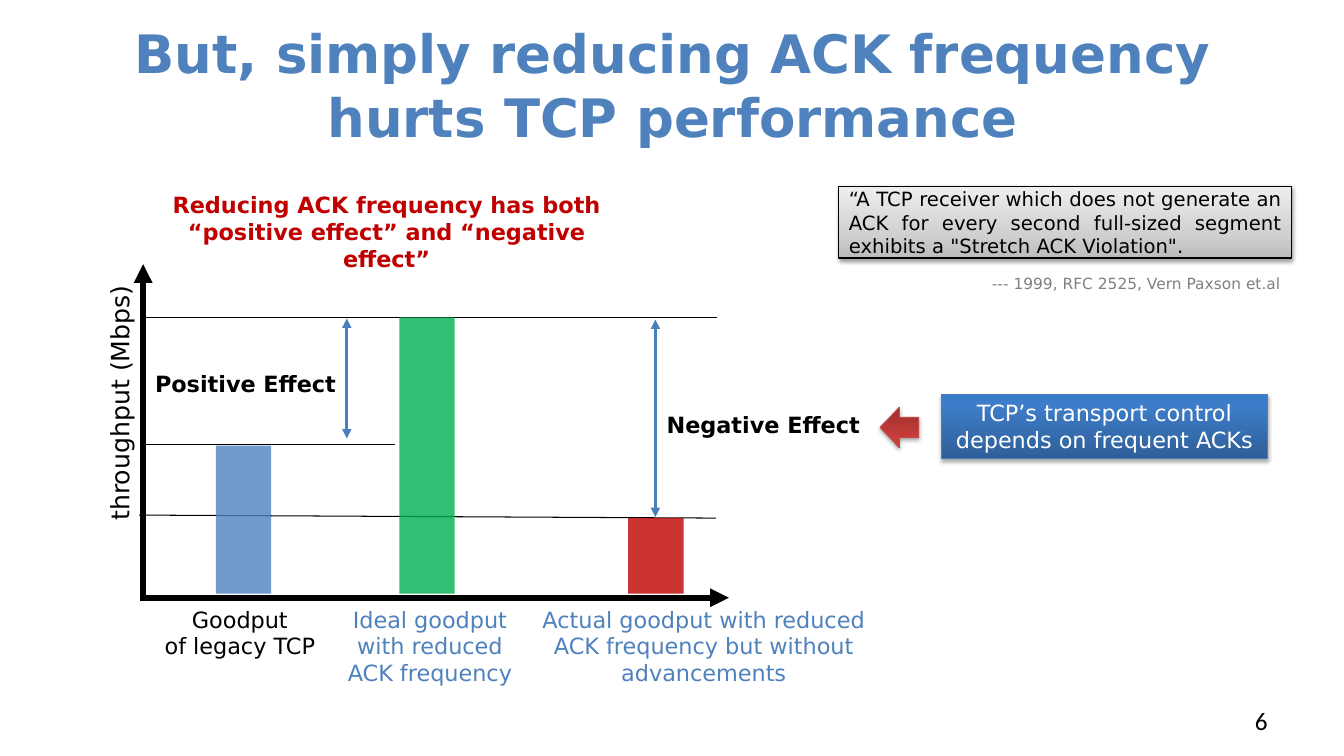
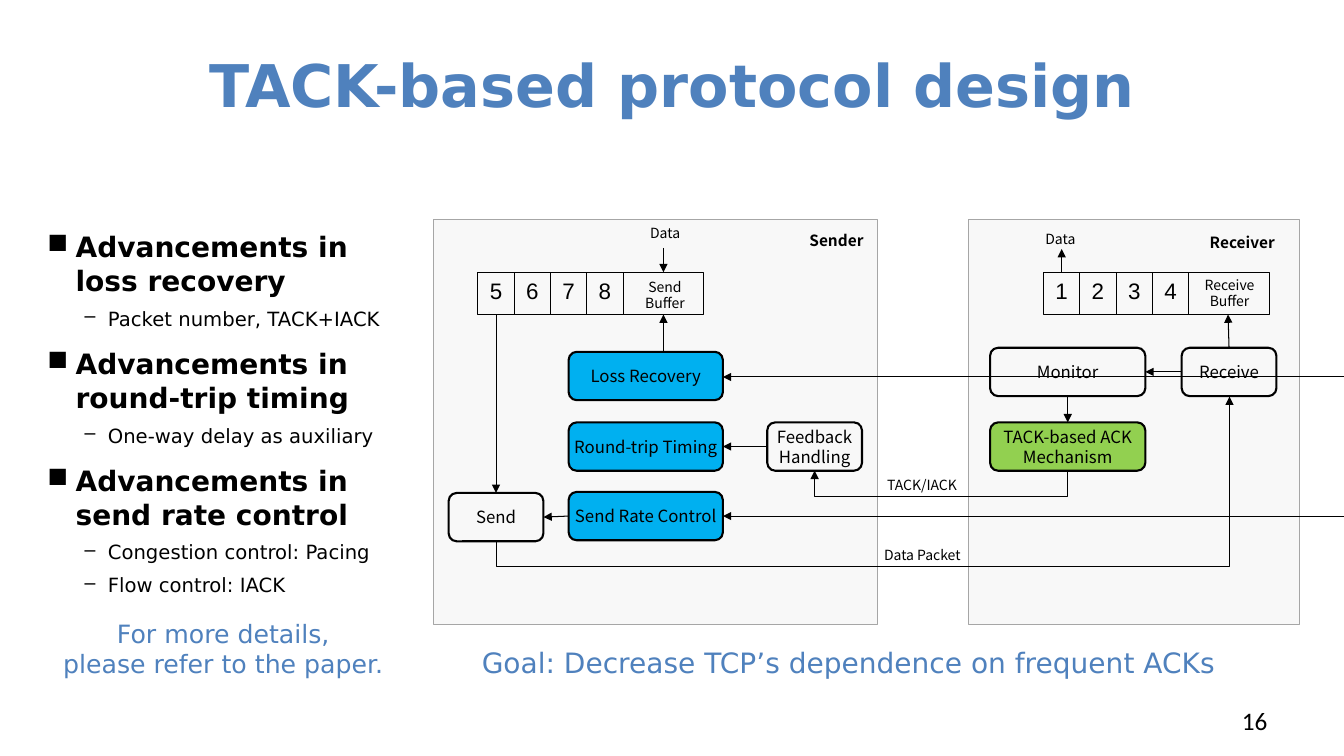
import pptx
import pptx.util
import pptx.dml.color
import pptx.enum.shapes
import pptx.enum.text
import pptx.oxml
import pptx.oxml.ns
import lxml.etree

Inches = pptx.util.Inches
Pt = pptx.util.Pt
qn = pptx.oxml.ns.qn
SubElement = lxml.etree.SubElement
rgb = pptx.dml.color.RGBColor.from_string
Shapes = pptx.enum.shapes.MSO_SHAPE
Connectors = pptx.enum.shapes.MSO_CONNECTOR
Align = pptx.enum.text.PP_ALIGN
Anchor = pptx.enum.text.MSO_ANCHOR

BODY, DIAGRAM = "DejaVu Sans", "Noto Sans CJK SC"
BLACK, BLUE, RED, ARROW_BLUE = "000000", "4F81BD", "C00000", "4B7EBC"
TOP, MIDDLE = Anchor.TOP, Anchor.MIDDLE
LEFT, CENTER, RIGHT = Align.LEFT, Align.CENTER, Align.RIGHT


def add_box(slide, at, text="", size=16, color=BLACK, bold=False, font=BODY, align=CENTER,
            kind=None, fill=None, alpha=100, gradient=None, shadow=None, outline=None,
            weight=0.75, anchor=TOP, insets=(0.1, 0.05), wrap=True, rotation=0):
    place = [Inches(length) for length in at]
    if kind is None:
        shape = slide.shapes.add_textbox(*place)
    else:
        shape = slide.shapes.add_shape(kind, *place)
        shape.shadow.inherit = False
        shape.fill.background()
        shape.line.fill.background()
    shape.rotation = rotation
    if fill:
        shape.fill.solid()
        shape.fill.fore_color.rgb = rgb(fill)
        if alpha < 100:
            color_element = shape.fill._xPr.find(".//" + qn("a:srgbClr"))
            SubElement(color_element, qn("a:alpha")).set("val", str(alpha * 1000))
    if gradient:
        shape.fill.gradient()
        shape.fill.gradient_angle = 90
        stops = shape._element.spPr.find(".//" + qn("a:gsLst"))
        for stop in list(stops):
            stops.remove(stop)
        for position, stop_color in gradient:
            stop = SubElement(stops, qn("a:gs"), pos=str(position * 1000))
            SubElement(stop, qn("a:srgbClr"), val=stop_color)
    if outline:
        shape.line.color.rgb = rgb(outline)
        shape.line.width = Pt(weight)
    if shadow:
        opacity, distance = shadow
        effects = shape._element.spPr.find(qn("a:effectLst"))
        outer = SubElement(effects, qn("a:outerShdw"), blurRad=str(Pt(3.1)), dist=str(Pt(distance)),
                           dir="5400000", rotWithShape="0")
        shade = SubElement(outer, qn("a:srgbClr"), val=BLACK)
        SubElement(shade, qn("a:alpha"), val=str(opacity * 1000))
    if text:
        frame = shape.text_frame
        frame.word_wrap = wrap
        if not wrap:
            frame.auto_size = pptx.enum.text.MSO_AUTO_SIZE.SHAPE_TO_FIT_TEXT
        frame.vertical_anchor = anchor
        frame.margin_left = frame.margin_right = Inches(insets[0])
        frame.margin_top = frame.margin_bottom = Inches(insets[1])
        frame.text = text
        for paragraph in frame.paragraphs:
            paragraph.alignment = align
            paragraph.font.name = font
            paragraph.font.size = Pt(size)
            paragraph.font.bold = bold
            paragraph.font.color.rgb = rgb(color)
    return shape


def add_line(slide, start, end, ends="", color=BLACK, weight=0.75, kind=Connectors.STRAIGHT):
    points = [Inches(length) for length in (*start, *end)]
    connector = slide.shapes.add_connector(kind, *points)
    connector.line.color.rgb = rgb(color)
    connector.line.width = Pt(weight)
    for end_name in ends.split():
        SubElement(connector.line._ln, qn("a:" + end_name), type="triangle")
    SubElement(connector._element.spPr, qn("a:effectLst"))
    return connector


presentation = pptx.Presentation()
presentation.slide_width = Inches(13.33)
presentation.slide_height = Inches(7.5)

slides = []
for title, title_size, number in [
    ("But, simply reducing ACK frequency hurts TCP performance", 37.8, "6"),
    ("TACK-based protocol design", 42, "16"),
]:
    slide = presentation.slides.add_slide(presentation.slide_layouts[6])
    add_box(slide, (0.67, 0.21, 12, 1.25), title, title_size, BLUE, True, anchor=MIDDLE)
    add_box(slide, (9.56, 6.95, 3.11, 0.4), number, 18, font="Calibri", align=RIGHT)
    slides.append(slide)
effect_slide, design_slide = slides

slide = effect_slide
for start, end in [((1.38, 5.11), (7.1, 5.14)), ((1.42, 3.15), (7.11, 3.15)), ((1.4, 4.41), (3.92, 4.41))]:
    add_line(slide, start, end)
for start, end in [((1.42, 5.94), (1.42, 2.62)), ((1.39, 5.93), (7.23, 5.93))]:
    add_line(slide, start, end, "tailEnd", weight=4.5)

bar_bottom = 5.89
for bar_left, bar_top, bar_color in [(2.14, 4.42, BLUE), (3.96, 3.15, "00B050"), (6.23, 5.14, RED)]:
    add_box(slide, (bar_left, bar_top, 0.55, bar_bottom - bar_top),
            kind=Shapes.RECTANGLE, fill=bar_color, alpha=80)
for x, top, bottom in [(3.44, 3.16, 4.35), (6.5, 3.17, 5.13)]:
    add_line(slide, (x, top), (x, bottom), "headEnd tailEnd", ARROW_BLUE, 2.25)

add_box(slide, (-0.26, 3.62, 2.89, 0.4), "throughput (Mbps)", 18, align=LEFT, rotation=270)
add_box(slide, (1.48, 5.96, 1.8, 0.64), "Goodput\nof legacy TCP", wrap=False)
add_box(slide, (3.28, 5.96, 1.97, 0.91), "Ideal goodput with reduced ACK frequency", color=BLUE)
add_box(slide, (5.17, 5.96, 3.62, 0.91),
        "Actual goodput with reduced ACK frequency but without advancements", color=BLUE)
add_box(slide, (1.43, 3.62, 2.01, 0.37), "Positive Effect", bold=True, wrap=False)
add_box(slide, (6.51, 4.03, 2.12, 0.37), "Negative Effect", bold=True, wrap=False)
add_box(slide, (1.31, 1.85, 5.05, 0.64),
        "Reducing ACK frequency has both “positive effect” and “negative effect”", color=RED, bold=True)

add_box(slide, (8.73, 4.04, 0.38, 0.4), kind=Shapes.RIGHT_ARROW, rotation=180, outline="BF4C48",
        gradient=[(0, "9C2F2D"), (80, "CB3E3A"), (100, "CE3B37")], shadow=(35, 1.8))
add_box(slide, (9.34, 3.91, 3.23, 0.64), "TCP’s transport control depends on frequent ACKs",
        color="FFFFFF", kind=Shapes.RECTANGLE, outline=ARROW_BLUE,
        gradient=[(0, "2F5F99"), (80, "3D7CC7"), (100, "3A7CCB")], shadow=(35, 1.8))
add_box(slide, (8.32, 1.85, 4.49, 0.71),
        "“A TCP receiver which does not generate an ACK for every second full-sized segment "
        "exhibits a \"Stretch ACK Violation\".",
        14, align=Align.JUSTIFY, kind=Shapes.RECTANGLE, outline=BLACK, anchor=MIDDLE, insets=(0.1, 0),
        gradient=[(0, "BDBDBD"), (35, "D1D1D1"), (100, "EEEEEE")], shadow=(38, 1.6))
add_box(slide, (9.74, 2.72, 3.23, 0.19), "--- 1999, RFC 2525, Vern Paxson et.al", 11, "808080",
        align=LEFT, anchor=MIDDLE, insets=(0.1, 0))

slide = design_slide
for panel_left, panel_width in [(9.61, 3.28), (4.3, 4.4)]:
    add_box(slide, (panel_left, 2.18, panel_width, 4.02), kind=Shapes.RECTANGLE,
            fill="F2F2F2", alpha=50, outline="A6A6A6")

cell_width = 0.36
for buffer_left, digits in [(4.74, "5678"), (10.35, "1234")]:
    for index, digit in enumerate(digits):
        add_box(slide, (buffer_left + index * cell_width, 2.7, cell_width, 0.42), digit,
                font="Arial", kind=Shapes.RECTANGLE, outline=BLACK)
    add_box(slide, (buffer_left + len(digits) * cell_width, 2.7, 0.8, 0.42),
            kind=Shapes.RECTANGLE, outline=BLACK)

blocks = {}
for label, left, top, width, fill in [
    ("Send", 4.45, 4.89, 0.94, None),
    ("Loss Recovery", 5.64, 3.49, 1.53, "00B0F0"),
    ("Round-trip Timing", 5.64, 4.19, 1.53, "00B0F0"),
    ("Send Rate Control", 5.64, 4.88, 1.53, "00B0F0"),
    ("Feedback\nHandling", 7.61, 4.19, 0.94, None),
    ("TACK-based ACK Mechanism", 9.82, 4.19, 1.54, "92D050"),
    ("Receive", 11.72, 3.45, 0.94, None),
    ("Monitor", 9.82, 3.45, 1.54, None),
]:
    blocks[label] = add_box(slide, (left, top, width, 0.48), label, 12, font=DIAGRAM,
                            kind=Shapes.ROUNDED_RECTANGLE, fill=fill, outline=BLACK, weight=1.5,
                            anchor=MIDDLE, insets=(0, 0))

for start, end in [
    ((4.92, 3.12), (4.92, 4.89)),
    ((5.64, 5.12), (5.39, 5.13)),
    ((7.61, 4.43), (7.17, 4.43)),
    ((6.58, 3.49), (6.58, 3.12)),
    ((10.59, 3.93), (10.59, 4.19)),
    ((12.19, 3.45), (12.18, 3.12)),
    ((11.72, 3.69), (11.36, 3.69)),
    ((6.58, 2.46), (6.58, 2.7)),
    ((10.53, 2.7), (10.53, 2.47)),
    ((13.33, 3.74), (7.17, 3.74)),
    ((13.33, 5.12), (7.17, 5.12)),
]:
    add_line(slide, start, end, "tailEnd")

for source, target, start, end, frame, flips, bend in [
    ("Send", "Receive", (4.92, 5.37), (12.19, 3.93), (7.84, 1.02, 1.44, 7.27), ("flipH", "flipV"), -0.174),
    ("TACK-based ACK Mechanism", "Feedback\nHandling", (10.59, 4.68), (8.08, 4.67),
     (9.33, 3.42, 0.01, 2.51), ("flipH",), -25),
]:
    connector = add_line(slide, start, end, "tailEnd", kind=Connectors.ELBOW)
    connector.begin_connect(blocks[source], 2)
    connector.end_connect(blocks[target], 2)
    connector.left, connector.top, connector.width, connector.height = [Inches(length) for length in frame]
    transform = connector._element.spPr.find(qn("a:xfrm"))
    for flip in ("flipH", "flipV"):
        transform.set(flip, "1" if flip in flips else "0")
    transform.set("rot", "5400000")
    adjustments = connector._element.spPr.find(".//" + qn("a:avLst"))
    SubElement(adjustments, qn("a:gd"), name="adj1", fmla=f"val {round(bend * 100000)}")

for label, at, size, bold, align in [
    ("Send\nBuffer", (6.29, 2.71, 0.61, 0.44), 10, False, CENTER),
    ("Receive\nBuffer", (11.84, 2.69, 0.71, 0.44), 10, False, CENTER),
    ("TACK/IACK", (8.7, 4.68, 0.95, 0.27), 10, False, LEFT),
    ("Data Packet", (8.67, 5.37, 1, 0.27), 10, False, LEFT),
    ("Data", (6.35, 2.18, 0.52, 0.27), 10, False, LEFT),
    ("Data", (10.27, 2.24, 0.52, 0.27), 10, False, LEFT),
    ("Sender", (7.93, 2.24, 0.74, 0.29), 11, True, LEFT),
    ("Receiver", (11.9, 2.26, 0.86, 0.29), 11, True, LEFT),
]:
    add_box(slide, at, label, size, bold=bold, font=DIAGRAM, align=align, wrap=False)

advancements = [
    ("Advancements in loss recovery", ["Packet number, TACK+IACK"]),
    ("Advancements in round-trip timing", ["One-way delay as auxiliary"]),
    ("Advancements in send rate control", ["Congestion control: Pacing", "Flow control: IACK"]),
]
outline_rows = []
for heading, details in advancements:
    outline_rows.append((heading, 0))
    outline_rows.extend((detail, 1) for detail in details)

outline_box = slide.shapes.add_textbox(Inches(0.38), Inches(2.24), Inches(3.67), Inches(3.86))
frame = outline_box.text_frame
frame.word_wrap = True
frame.margin_left = frame.margin_right = Inches(0.09)
frame.margin_top = frame.margin_bottom = Inches(0.04)
frame.text = "\n".join(text for text, level in outline_rows)
for index, (paragraph, (text, level)) in enumerate(zip(frame.paragraphs, outline_rows)):
    bullet, margin, indent, size = [("■", 0.28, -0.28, 20), ("–", 0.6, -0.23, 14)][level]
    properties = paragraph._p.get_or_add_pPr()
    properties.set("marL", str(Inches(margin)))
    properties.set("indent", str(Inches(indent)))
    SubElement(properties, qn("a:buChar"), char=bullet)
    paragraph.level = level
    if level:
        paragraph.line_spacing = 1.4
    elif index:
        paragraph.space_before = Pt(12)
    paragraph.font.name = BODY
    paragraph.font.size = Pt(size)
    paragraph.font.bold = level == 0
    paragraph.font.color.rgb = rgb(BLACK)

add_box(slide, (4.68, 6.35, 7.55, 0.44), "Goal: Decrease TCP’s dependence on frequent ACKs", 20, BLUE,
        align=LEFT, wrap=False)
add_box(slide, (0.41, 6.08, 3.61, 0.71), "For more details,\nplease refer to the paper.", 18, BLUE)

presentation.save("out.pptx")
